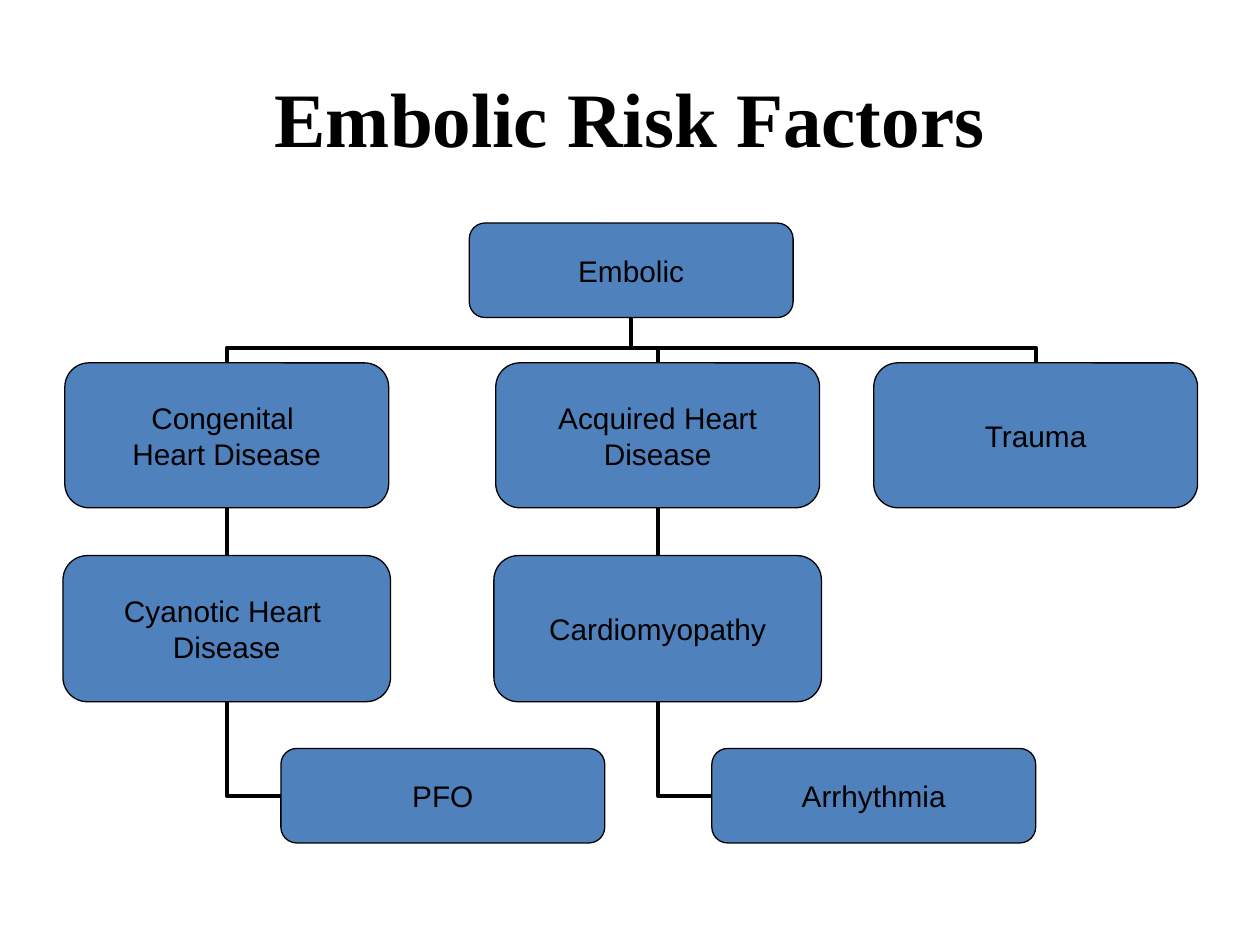
from lxml import etree
from pptx import Presentation
from pptx import util as u
from pptx.dml.color import RGBColor
from pptx.enum import shapes as s, text as t
from pptx.oxml.ns import qn

HUES = {"ink": "000000", "node": "4F81BD"}
WIDE = 2.57  # usual node width
STEP = 0.43  # from a branch axis to the left of its leaf

# Rows: top and height, measured from the top of the tree
ROOT, KIND, CAUSE, LEAF = (0, 0.75), (1.11, 1.15), (2.64, 1.16), (4.17, 0.75)
TRUNK = 4.51
# Branches: axis from the left of the tree, kind, cause, leaf
TREE = [
    (1.3, ["Congenital ", "Heart Disease"], ["Cyanotic Heart ", "Disease"], ["PFO"]),
    (4.72, ["Acquired Heart", "Disease"], ["Cardiomyopathy"], ["Arrhythmia"]),
    (7.72, ["Trauma"], None, None),
]


def hue(name):
    return RGBColor.from_string(HUES[name])


def write(frame, lines, size, face, bold=False):
    frame.vertical_anchor = t.MSO_ANCHOR.MIDDLE
    for i, line in enumerate(lines):
        para = frame.paragraphs[0] if i == 0 else frame.add_paragraph()
        para.text = line
        para.alignment = t.PP_ALIGN.CENTER
        font = para.font
        font.size, font.name, font.bold = u.Pt(size), face, bold
        font.color.rgb = hue("ink")


def add_title(slide, x, y, w, h):
    box = slide.shapes.add_textbox(*map(u.Inches, (x, y, w, h)))
    box.text_frame.word_wrap = True
    write(box.text_frame, ["Embolic Risk Factors"], 44, "Times New Roman", True)


def add_link(slide, x1, y1, x2, y2, side=False):
    """Elbow from a child up to its parent; side: leaves the child's left."""
    dx, dy = x2 - x1, y2 - y1
    # Size before the turn, so that the first leg is horizontal
    if side:
        turn, w, h = 180, -dx, -dy
    elif dx > 0:
        turn, w, h = 270, -dy, dx
    else:
        turn, w, h = 90, dy, -dx
    mx, my = (x1 + x2) / 2, (y1 + y2) / 2
    ends = mx - w / 2, my - h / 2, mx + w / 2, my + h / 2
    link = slide.shapes.add_connector(s.MSO_CONNECTOR.ELBOW, *map(u.Inches, ends))
    link.line.color.rgb = hue("ink")
    link.line.width = u.Pt(2.25)
    props = link._element.spPr
    etree.SubElement(props, qn("a:effectLst"))
    props.find(qn("a:xfrm")).set("rot", str(turn * 60000))
    geom = props.find(qn("a:prstGeom"))
    if side:
        geom.set("prst", "bentConnector2")
    else:
        bend = etree.SubElement(geom.find(qn("a:avLst")), qn("a:gd"))
        bend.set("name", "adj1")
        bend.set("fmla", "val 33500")


def add_node(slide, mid, top, high, lines, wide=WIDE):
    node = slide.shapes.add_shape(
        s.MSO_SHAPE.ROUNDED_RECTANGLE,
        *map(u.Inches, (mid - wide / 2, top, wide, high)))
    node.shadow.inherit = False
    node.fill.solid()
    node.fill.fore_color.rgb = hue("node")
    node.line.color.rgb = hue("ink")
    node.line.width = u.Pt(0.75)
    node.text_frame.word_wrap = False
    write(node.text_frame, lines, 17, "Arial")


def add_tree(slide, x, y):
    def row(place):
        return y + place[0], place[1]

    def foot(place):
        return y + sum(place)

    # Links, behind the nodes
    for axis, _, below, _ in TREE:
        mid = x + axis
        add_link(slide, mid, y + KIND[0], x + TRUNK, foot(ROOT))
        if below:
            add_link(slide, mid, y + CAUSE[0], mid, foot(KIND))
            add_link(slide, mid + STEP, y + LEAF[0] + LEAF[1] / 2,
                     mid, foot(CAUSE), side=True)

    # Nodes
    add_node(slide, x + TRUNK, *row(ROOT), ["Embolic"])
    for axis, top, below, last in TREE:
        mid = x + axis
        add_node(slide, mid, *row(KIND), top)
        if below:
            add_node(slide, mid, *row(CAUSE), below, wide=2.6)
            add_node(slide, mid + STEP + WIDE / 2, *row(LEAF), last)


def main():
    deck = Presentation()
    deck.slide_width, deck.slide_height = u.Inches(10), u.Inches(7.5)
    slide = deck.slides.add_slide(deck.slide_layouts[6])
    add_title(slide, 0.5, 0.3, 9, 1.25)
    add_tree(slide, 0.5, 1.77)
    deck.save("out.pptx")


if __name__ == "__main__":
    main()
